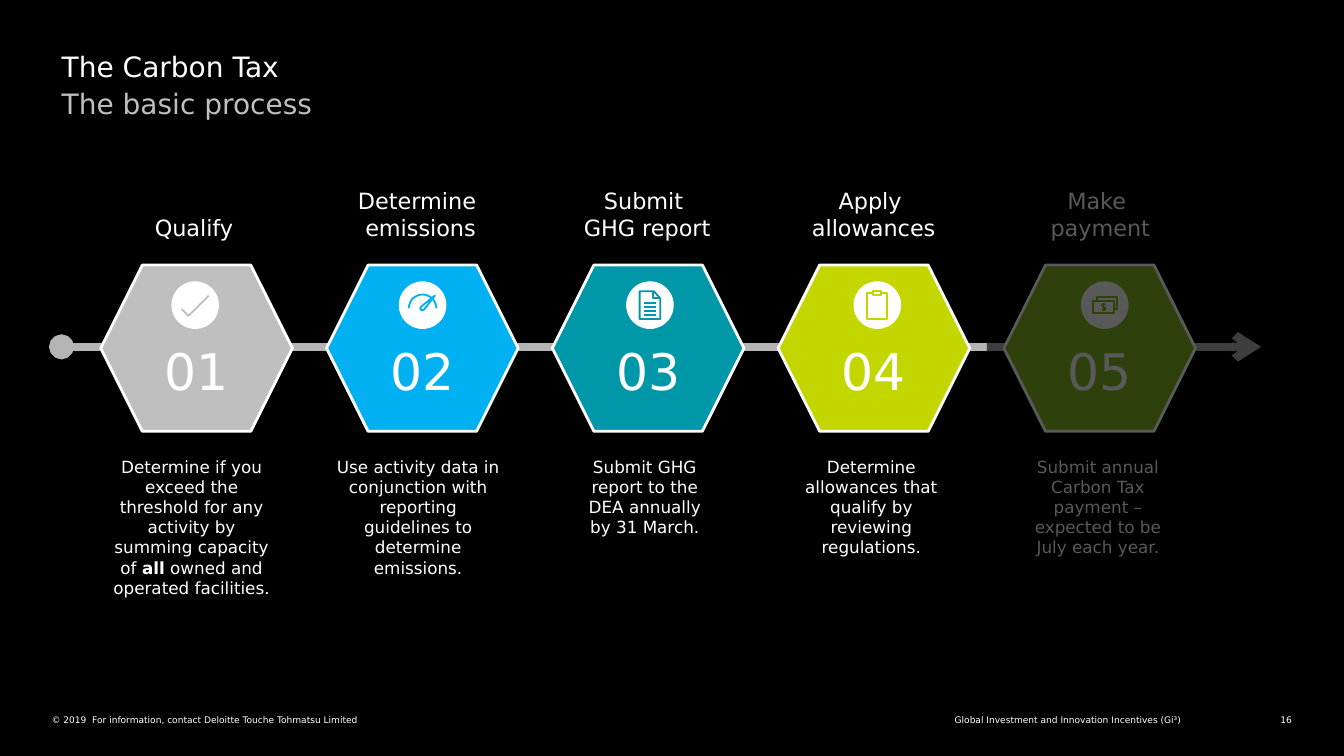
from collections import namedtuple
from dataclasses import dataclass
from math import cos, pi, sin

from lxml.etree import SubElement
from pptx import Presentation
from pptx.dml.color import RGBColor
from pptx.enum.shapes import MSO_CONNECTOR, MSO_SHAPE
from pptx.enum.text import MSO_ANCHOR as Anchor, MSO_AUTO_SIZE as AutoSize, PP_ALIGN as Align
from pptx.oxml.ns import qn
from pptx.util import Cm, Pt


@dataclass(frozen=True)
class Theme:
    font: str = "DejaVu Sans"
    background: str = "000000"
    text: str = "FFFFFF"
    subtitle: str = "BFBFBF"
    arrow: str = "B4B4B4"
    title_size: float = 20
    number_size: float = 36
    heading_size: float = 16
    body_size: float = 12
    footer_size: float = 6.5


THEME = Theme()
Step = namedtuple("Step", "heading heading_width body body_width body_lines color icon")

HEXAGON_LEFT, HEXAGON_TOP, HEXAGON_PITCH = 2.54, 6.68, 5.69
BADGE_CENTER, BADGE_MIDDLE, BADGE_PITCH, BADGE_SIZE = 4.92, 7.69, 5.73, 1.2
HEADING_CENTER, HEADING_BOTTOM = 4.89, 6.22
BODY_CENTER, BODY_TOP, TEXT_PITCH = 4.83, 11.38, 5.71


def rectangle(left, top, right, bottom):
    return [(left, top), (right, top), (right, bottom), (left, bottom), (left, top)]


# Icon strokes, in tenths of a millimetre from the centre of the badge
CHECK = [[(-34, 10), (-17, 27), (34, -24)]]
GAUGE = [
    [(round(-35 * cos(pi * i / 16)), round(8 - 35 * sin(pi * i / 16))) for i in range(17)],
    [(31, -24), (-4, 4), (-6, 9), (-2, 13), (4, 11), (31, -24)],
]
REPORT = [
    [(-26, -35), (10, -35), (26, -17), (26, 35), (-26, 35), (-26, -35)],
    [(8, -35), (8, -17), (26, -17)],
    *[[(-15, y), (15, y)] for y in (-5, 5, 15, 25)],
]
CLIPBOARD = [rectangle(-25, -31, 25, 35), rectangle(-10, -35, 10, -25)]
MONEY = [
    rectangle(-19, -20, 32, 10),
    rectangle(-30, -10, 24, 20),
    [(2, -2), (-5, -2), (-7, 1), (-5, 4), (0, 6), (2, 9), (0, 12), (-7, 12)],
    [(-3, -5), (-3, 15)],
]

STEPS = [
    Step("Qualify", 2.51,
         "Determine if you exceed the threshold for any activity by summing capacity "
         "of *all* owned and operated facilities.", 4.72, 7, "BFBFBF", CHECK),
    Step("Determine \nemissions", 3.9,
         "Use activity data in conjunction with reporting guidelines to determine emissions.",
         4.72, 6, "00B0F0", GAUGE),
    Step("Submit \nGHG report", 4.5,
         "Submit GHG report to the DEA annually by 31 March.", 3.84, 4, "0097A9", REPORT),
    Step("Apply \nallowances", 4.1,
         "Determine allowances that qualify by reviewing regulations.",
         4.39, 5, "C4D600", CLIPBOARD),
    Step("Make \npayment", 3.4,
         "Submit annual Carbon Tax payment – expected to be July each year.",
         3.86, 5, "86BC25", MONEY),
]


def rgb(color):
    return RGBColor.from_string(color)


def write_text(shape, text, size, color=THEME.text, align=Align.LEFT, anchor=Anchor.TOP,
               wrap=True, inset=None, fit=AutoSize.NONE, after=0):
    """Fill a shape with one paragraph; *asterisks* mark bold words."""
    frame = shape.text_frame
    frame.word_wrap, frame.auto_size, frame.vertical_anchor = wrap, fit, anchor
    if inset is not None:
        frame.margin_left = frame.margin_right = Cm(inset)
        frame.margin_top = frame.margin_bottom = Cm(inset)
    para = frame.paragraphs[0]
    para.alignment = align
    para.space_before, para.space_after = Pt(0), Pt(after)
    for part, words in enumerate(text.split("*")):
        for row, line in enumerate(words.split("\n")):
            if row:
                para.add_line_break()
            span = para.add_run()
            span.text = line
            span.font.name, span.font.size = THEME.font, Pt(size)
            span.font.bold = part % 2 == 1
            span.font.color.rgb = rgb(color)


def place(shape, left, top, width, height):
    shape.left, shape.top, shape.width, shape.height = map(Cm, (left, top, width, height))


def add_text(page, left, top, width, height, text, size, **formats):
    box = page.shapes.add_textbox(Cm(left), Cm(top), Cm(width), Cm(height))
    write_text(box, text, size, **formats)


def add_block(shapes, kind, left, top, width, height, fill, line=None):
    block = shapes.add_shape(kind, Cm(left), Cm(top), Cm(width), Cm(height))
    block.shadow.inherit = False
    block.fill.solid()
    block.fill.fore_color.rgb = rgb(fill)
    if line:
        block.line.color.rgb, block.line.width = rgb(line), Pt(2)
    else:
        block.line.fill.background()
    return block


def add_timeline(page):
    arrow = page.shapes.add_connector(
        MSO_CONNECTOR.STRAIGHT, Cm(1.55), Cm(8.74), Cm(31.78), Cm(8.74))
    arrow.line.color.rgb, arrow.line.width = rgb(THEME.arrow), Pt(6)
    outline = arrow.line._get_or_add_ln()
    SubElement(outline, qn("a:headEnd"), type="oval")
    SubElement(outline, qn("a:tailEnd"), type="arrow")
    SubElement(arrow._element.spPr, qn("a:effectLst"))


def add_badge(page, center, strokes, color):
    """Draw a white disc with an icon in the colour of its hexagon."""
    badge = page.shapes.add_group_shape().shapes
    add_block(badge, MSO_SHAPE.OVAL, center - BADGE_SIZE / 2, BADGE_MIDDLE - BADGE_SIZE / 2,
              BADGE_SIZE, BADGE_SIZE, THEME.text)
    for points in strokes:
        closed = points[0] == points[-1]
        builder = badge.build_freeform(*points[0], scale=Cm(0.01))
        builder.add_line_segments(points[1:], close=closed)
        stroke = builder.convert_to_shape(Cm(center), Cm(BADGE_MIDDLE))
        stroke.shadow.inherit = False
        if closed:
            stroke.fill.solid()
            stroke.fill.fore_color.rgb = rgb(THEME.text)
        else:
            stroke.fill.background()
        stroke.line.color.rgb, stroke.line.width = rgb(color), Pt(1.3)


def add_step(page, index, step):
    hexagon = add_block(page.shapes, MSO_SHAPE.HEXAGON, HEXAGON_LEFT + index * HEXAGON_PITCH,
                        HEXAGON_TOP, 4.83, 4.19, step.color, THEME.text)
    hexagon.adjustments[0] = 0.25
    write_text(hexagon, f"{index + 1:02}", THEME.number_size,
               align=Align.CENTER, anchor=Anchor.BOTTOM)
    add_badge(page, BADGE_CENTER + index * BADGE_PITCH, step.icon, step.color)

    height = 0.25 + 0.69 * len(step.heading.split("\n"))
    add_text(page, HEADING_CENTER + index * TEXT_PITCH - step.heading_width / 2,
             HEADING_BOTTOM - height, step.heading_width, height, step.heading,
             THEME.heading_size, align=Align.CENTER, wrap=False, fit=AutoSize.SHAPE_TO_FIT_TEXT)
    add_text(page, BODY_CENTER + index * TEXT_PITCH - step.body_width / 2, BODY_TOP,
             step.body_width, 0.25 + 0.51 * step.body_lines, step.body, THEME.body_size,
             align=Align.CENTER, fit=AutoSize.SHAPE_TO_FIT_TEXT)


def add_veil(page):
    """Dim the last step with a translucent black sheet."""
    veil = add_block(page.shapes, MSO_SHAPE.RECTANGLE, 24.87, 3.45, 8.13, 12.01,
                     THEME.background)
    SubElement(veil.fill._xPr.find(".//" + qn("a:srgbClr")), qn("a:alpha"), val="65000")


def add_footer(page):
    for left, width, text, align in (
        (1.3, 14.88, "© 2019  For information, contact Deloitte Touche Tohmatsu Limited", Align.LEFT),
        (16.18, 13.59, "Global Investment and Innovation Incentives (Gi³)", Align.RIGHT),
        (31.7, 0.86, "16", Align.RIGHT),
    ):
        add_text(page, left, 18, width, 0.28, text, THEME.footer_size, align=align, inset=0)


def main():
    deck = Presentation()
    deck.slide_width, deck.slide_height = Cm(33.87), Cm(19.05)
    page = deck.slides.add_slide(deck.slide_layouts[0])
    page.background.fill.solid()
    page.background.fill.fore_color.rgb = rgb(THEME.background)

    title, subtitle = page.placeholders
    place(title, 1.3, 1.12, 31.27, 0.94)
    write_text(title, "The Carbon Tax", THEME.title_size)
    place(subtitle, 1.3, 2.06, 31.27, 2.11)
    write_text(subtitle, "The basic process", THEME.title_size, color=THEME.subtitle, after=13.3)

    add_footer(page)
    add_timeline(page)
    for index, step in enumerate(STEPS):
        add_step(page, index, step)
    add_veil(page)
    deck.save("out.pptx")


if __name__ == "__main__":
    main()
